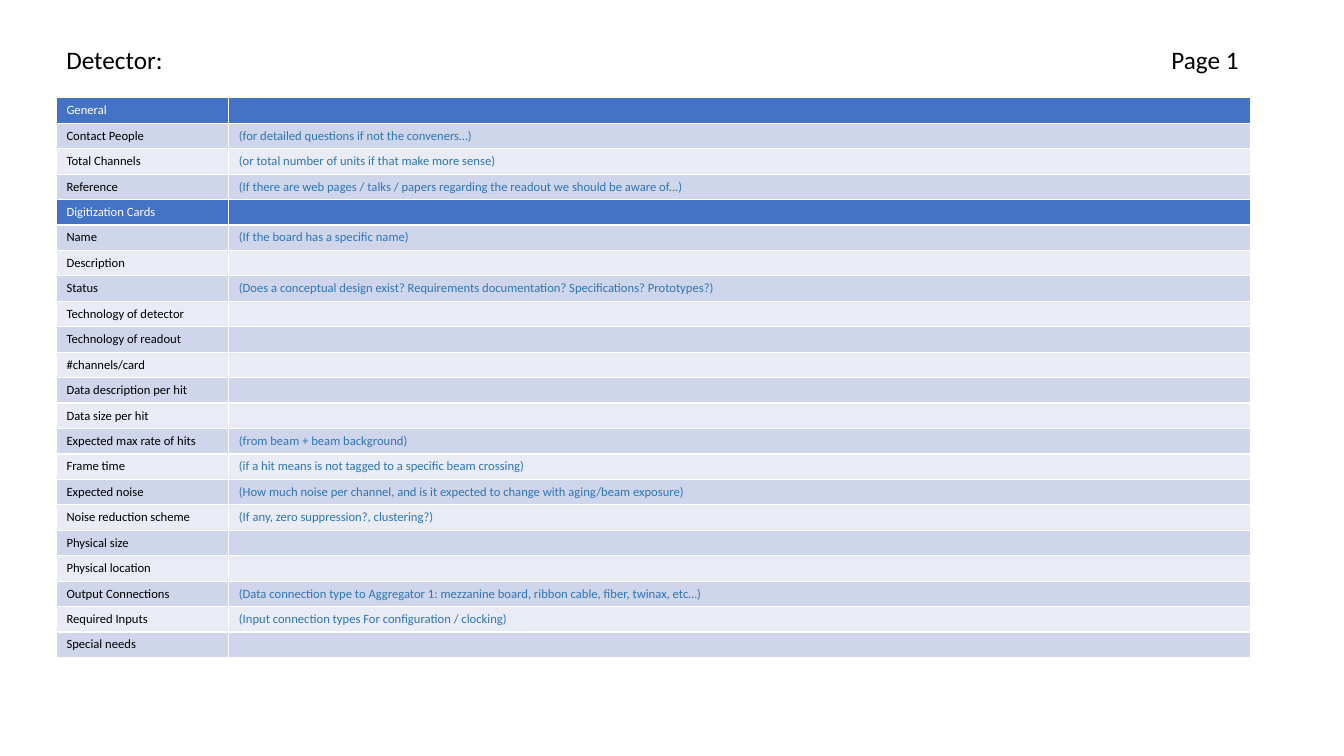
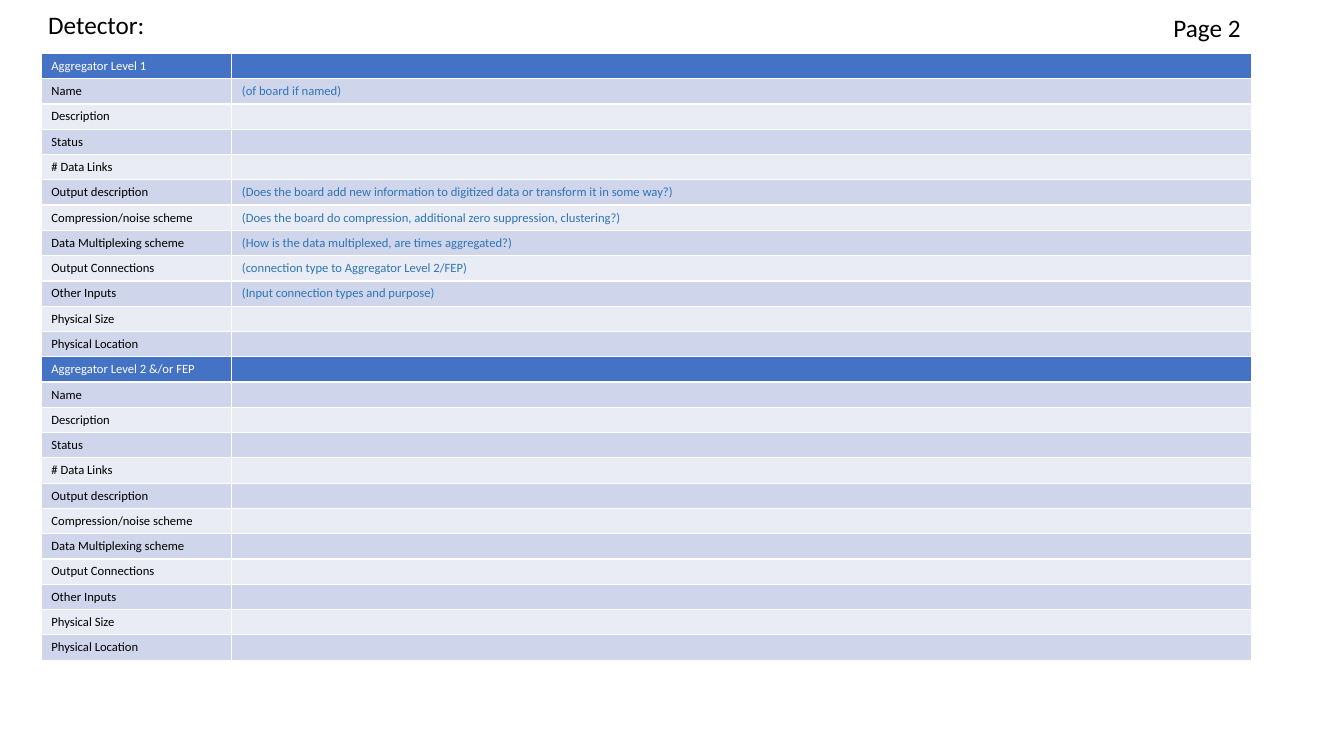
from lxml.etree import SubElement
from pptx import Presentation
from pptx.dml.color import RGBColor
from pptx.oxml.ns import qn
from pptx.util import Inches, Pt

FONT = "Calibri"
BLACK, WHITE, HINT = "000000", "FFFFFF", "2E75B6"
HEADER, BANDS = "4472C4", ("E9EBF5", "CFD5EA")
ROW_HEIGHT = 0.25
TITLE_SIZE, CELL_SIZE = 18, 9

GENERAL = [
    ("Contact People", "(for detailed questions if not the conveners…)"),
    ("Total Channels", "(or total number of units if that make more sense)"),
    ("Reference", "(If there are web pages / talks / papers regarding the readout we should be aware of...)"),
]
DIGITIZATION = [
    ("Name", "(If the board has a specific name)"),
    ("Description", ""),
    ("Status", "(Does a conceptual design exist? Requirements documentation? Specifications? Prototypes?)"),
    ("Technology of detector", ""),
    ("Technology of readout", ""),
    ("#channels/card", ""),
    ("Data description per hit", ""),
    ("Data size per hit", ""),
    ("Expected max rate of hits", "(from beam + beam background)"),
    ("Frame time", "(if a hit means is not tagged to a specific beam crossing)"),
    ("Expected noise", "(How much noise per channel, and is it expected to change with aging/beam exposure)"),
    ("Noise reduction scheme", "(If any, zero suppression?, clustering?)"),
    ("Physical size", ""),
    ("Physical location", ""),
    ("Output Connections", "(Data connection type to Aggregator 1: mezzanine board, ribbon cable, fiber, twinax, etc…)"),
    ("Required Inputs", "(Input connection types For configuration / clocking)"),
    ("Special needs", ""),
]
AGGREGATOR = [
    ("Name", "(of board if named)"),
    ("Description", ""),
    ("Status", ""),
    ("# Data Links", ""),
    ("Output description", "(Does the board add new information to digitized data or transform it in some way?)"),
    ("Compression/noise scheme", "(Does the board do compression, additional zero suppression, clustering?)"),
    ("Data Multiplexing scheme", "(How is the data multiplexed, are times aggregated?)"),
    ("Output Connections", "(connection type to Aggregator Level 2/FEP)"),
    ("Other Inputs", "(Input connection types and purpose)"),
    ("Physical Size", ""),
    ("Physical Location", ""),
]
PAGES = [
    {
        "sections": [("General", GENERAL), ("Digitization Cards", DIGITIZATION)],
        "table_at": (0.56, 0.97),
        "columns": (1.71, 10.13),
        "title_at": (0.56, 0.39),
        "number_at": (11.52, 0.39),
    },
    {
        "sections": [
            ("Aggregator Level 1", AGGREGATOR),
            ("Aggregator Level 2 &/or FEP", [(label, "") for label, _ in AGGREGATOR]),
        ],
        "table_at": (0.41, 0.53),
        "columns": (1.89, 10.11),
        "title_at": (0.38, 0.04),
        "number_at": (11.54, 0.07),
    },
]


def rgb(color):
    return RGBColor.from_string(color)


def add_run(p, text, size, color):
    r = p.add_run()
    r.text = text
    for name, value in {"name": FONT, "size": Pt(size)}.items():
        setattr(r.font, name, value)
    r.font.color.rgb = rgb(color)


def add_heading(slide, text, at, width):
    sp = slide.shapes.add_textbox(*map(Inches, (*at, width, 0.4)))
    tf = sp.text_frame
    tf.word_wrap = False
    add_run(tf.paragraphs[0], text, TITLE_SIZE, BLACK)


def set_borders(cell):
    tc_pr = cell._tc.get_or_add_tcPr()
    for side in ("a:lnL", "a:lnR", "a:lnT", "a:lnB"):
        ln = SubElement(tc_pr, qn(side), w=str(Pt(1)))
        SubElement(SubElement(ln, qn("a:solidFill")), qn("a:srgbClr"), val=WHITE)


def fill_cell(cell, text, color, fill):
    set_borders(cell)
    cell.fill.solid()
    cell.fill.fore_color.rgb = rgb(fill)
    p = cell.text_frame.paragraphs[0]
    if text:
        add_run(p, text, CELL_SIZE, color)
    else:
        SubElement(p._p, qn("a:endParaRPr"), sz=str(CELL_SIZE * 100))


def add_form(slide, sections, at, columns):
    rows = []
    for heading, fields in sections:
        rows.append((heading, "", True))
        rows.extend((label, hint, False) for label, hint in fields)
    box = (*at, sum(columns), ROW_HEIGHT * len(rows))
    table = slide.shapes.add_table(len(rows), len(columns), *map(Inches, box)).table
    table.first_row = table.horz_banding = False
    for column, width in zip(table.columns, columns):
        column.width = Inches(width)
    for i, (label, hint, is_heading) in enumerate(rows):
        table.rows[i].height = Inches(ROW_HEIGHT)
        fill = HEADER if is_heading else BANDS[i % 2]
        fill_cell(table.cell(i, 0), label, WHITE if is_heading else BLACK, fill)
        fill_cell(table.cell(i, 1), hint, HINT, fill)


def add_page(prs, number, page):
    slide = prs.slides.add_slide(prs.slide_layouts[6])
    add_form(slide, page["sections"], page["table_at"], page["columns"])
    add_heading(slide, "Detector:", page["title_at"], 1.23)
    add_heading(slide, f"Page {number}", page["number_at"], 0.88)


def main():
    prs = Presentation()
    prs.slide_width, prs.slide_height = Inches(13.33), Inches(7.5)
    for number, page in enumerate(PAGES, 1):
        add_page(prs, number, page)
    prs.save("out.pptx")


if __name__ == "__main__":
    main()
